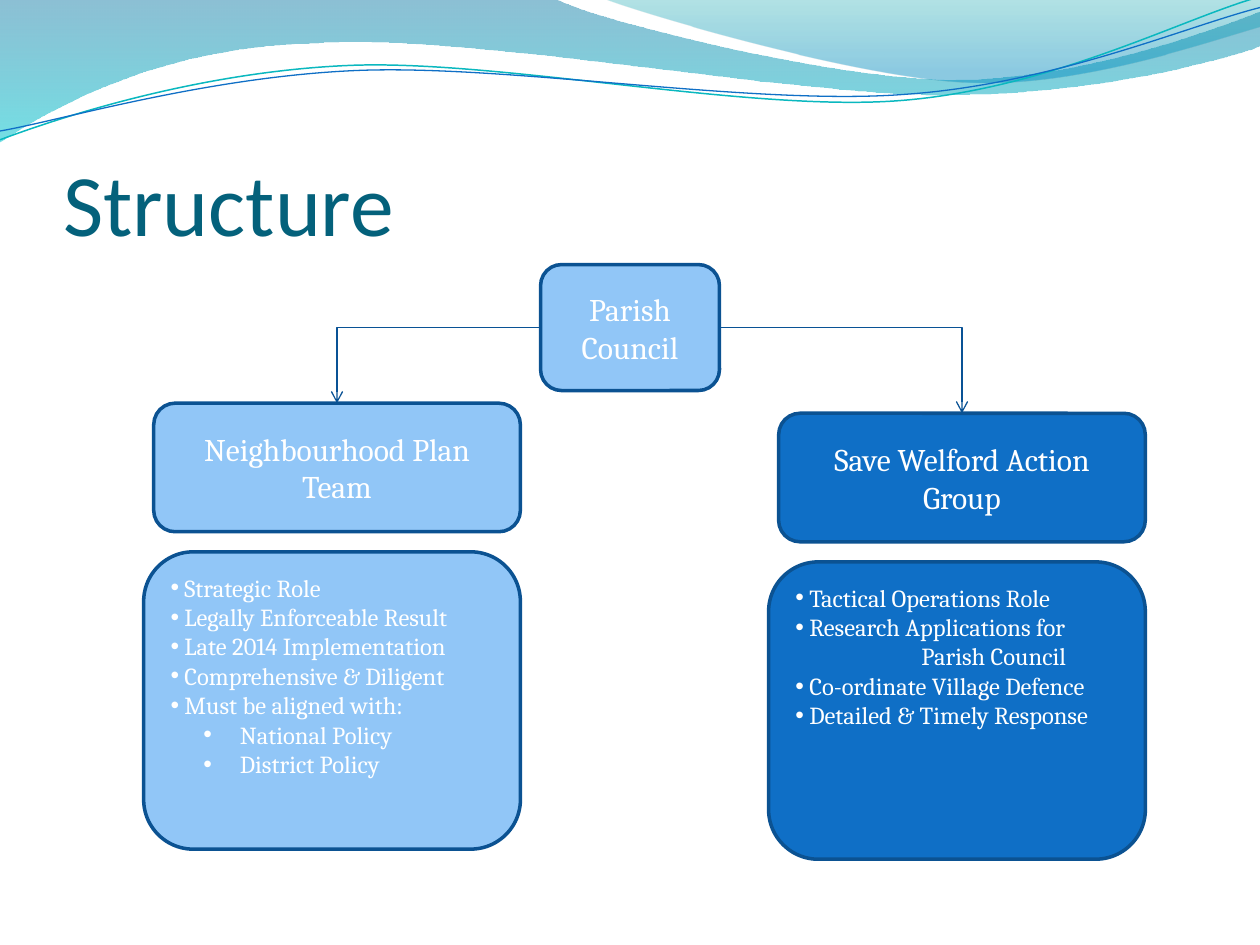
from dataclasses import dataclass

from lxml.etree import SubElement
from pptx import Presentation
from pptx.dml.color import RGBColor
from pptx.enum.shapes import MSO_CONNECTOR as Connector, MSO_SHAPE as Preset
from pptx.enum.text import MSO_ANCHOR as Anchor, PP_ALIGN as Align
from pptx.oxml.ns import qn
from pptx.util import Inches, Pt

WHITE = RGBColor(0xFF, 0xFF, 0xFF)
TITLE_TEAL = RGBColor(0x04, 0x61, 0x7B)
LIGHT_BLUE = RGBColor(0x91, 0xC6, 0xF7)
BLUE = RGBColor(0x0F, 0x6F, 0xC6)
BORDER_BLUE = RGBColor(0x0B, 0x52, 0x92)
ARROW_BLUE = RGBColor(0x09, 0x52, 0x95)
LINE_TEAL = RGBColor(0x0A, 0xB8, 0xBF)
WAVE_BLUE = RGBColor(0x00, 0x74, 0xA1)
WAVE_CYAN = RGBColor(0x00, 0xC6, 0xCF)
CREST_TEAL = RGBColor(0x00, 0xA1, 0xA9)
CREST_BLUE = RGBColor(0x00, 0x8B, 0xBF)

TOP, LEFT, RIGHT = 0, 1, 3  # connection sites of a rounded rectangle


@dataclass
class GradientStop:
    position: float
    color: RGBColor
    opacity: int


@dataclass
class Box:
    left: float
    top: float
    width: float
    height: float
    fill: RGBColor


@dataclass
class Item:
    text: str
    level: int = 0


# Each step is an end point (x, y) or a Bezier curve (x1, y1, x2, y2, x, y)
WAVE = [(0, 0), (4.4, -0.01), (4.76, 0.17, 6.64, 0.63, 7.58, 0.63),
        (8.53, 0.63, 9.58, 0.26, 10, 0.09), (10.01, 0.36),
        (9.83, 0.44, 8.7, 0.76, 7.46, 0.75), (6.22, 0.75, 3.82, 0.28, 2.57, 0.34),
        (1.29, 0.36, 0.46, 0.83, -0.01, 1.13)]
CREST = [(4.79, -0.01), (5.09, 0.11, 6.82, 0.62, 7.69, 0.65),
         (8.56, 0.69, 9.61, 0.32, 10, 0.21), (10, 0)]
TEAL_LINE = [(0, 1.11), (0.48, 0.93, 1.58, 0.57, 2.77, 0.52),
             (3.95, 0.47, 5.93, 0.89, 7.13, 0.8), (8.33, 0.71, 9.38, 0.15, 9.98, -0.02)]
BLUE_LINE = [(0, 1.04), (0.47, 0.96, 1.64, 0.61, 2.83, 0.56),
             (4.03, 0.51, 5.97, 0.84, 7.17, 0.75), (8.36, 0.67, 9.41, 0.21, 10, 0.06)]

PLAN_ITEMS = [Item("Strategic Role"), Item("Legally Enforceable Result"),
              Item("Late 2014 Implementation"), Item("Comprehensive & Diligent"),
              Item("Must be aligned with:"), Item("National Policy", 1),
              Item("District Policy", 1)]
ACTION_ITEMS = [Item("Tactical Operations Role"),
                Item("Research Applications for\v\tParish Council"),
                Item("Co-ordinate Village Defence"), Item("Detailed & Timely Response")]


def add_outline(slide, steps: list, close: bool):
    """Draw all points as segments, then merge each control triple into a curve."""
    points = [(Inches(step[i]), Inches(step[i + 1]))
              for step in steps for i in range(0, len(step), 2)]
    builder = slide.shapes.build_freeform(*points[0])
    builder.add_line_segments(points[1:], close=close)
    shape = builder.convert_to_shape()
    shape.shadow.inherit = False
    segments = iter(list(shape._element.iter(qn("a:lnTo"))))
    for step in steps[1:]:
        segment = next(segments)
        if len(step) == 6:
            curve = segment.makeelement(qn("a:cubicBezTo"))
            segment.addprevious(curve)
            for part in (segment, next(segments), next(segments)):
                curve.append(part[0])
                part.getparent().remove(part)
    return shape


def add_wave(slide, steps: list, stops: list[GradientStop]) -> None:
    shape = add_outline(slide, steps, True)
    shape.line.fill.background()
    shape.fill.gradient()
    shape.fill.gradient_angle = 270
    for gradient_stop, stop in zip(shape.fill.gradient_stops, stops):
        gradient_stop.position = stop.position
        gradient_stop.color.rgb = stop.color
    for color, stop in zip(shape._element.spPr.iter(qn("a:srgbClr")), stops):
        SubElement(color, qn("a:alpha"), val=str(stop.opacity * 1000))


def add_wave_line(slide, steps: list, color: RGBColor, width: float) -> None:
    shape = add_outline(slide, steps, False)
    shape.fill.background()
    shape.line.color.rgb = color
    shape.line.width = Pt(width)


def add_box(slide, box: Box):
    shape = slide.shapes.add_shape(
        Preset.ROUNDED_RECTANGLE, Inches(box.left), Inches(box.top),
        Inches(box.width), Inches(box.height))
    shape.shadow.inherit = False
    shape.fill.solid()
    shape.fill.fore_color.rgb = box.fill
    shape.line.color.rgb = BORDER_BLUE
    shape.line.width = Pt(2)
    shape.text_frame.word_wrap = True
    return shape


def style(paragraph, font_name: str, size: int, color: RGBColor, align) -> None:
    paragraph.alignment = align
    paragraph.font.name = font_name
    paragraph.font.size = Pt(size)
    paragraph.font.color.rgb = color


def add_heading_box(slide, box: Box, text: str):
    shape = add_box(slide, box)
    shape.text_frame.vertical_anchor = Anchor.MIDDLE
    paragraph = shape.text_frame.paragraphs[0]
    paragraph.text = text
    style(paragraph, "Cambria", 18, WHITE, Align.CENTER)
    return shape


def add_list_box(slide, box: Box, items: list[Item]) -> None:
    frame = add_box(slide, box).text_frame
    frame.vertical_anchor = Anchor.TOP
    for index, item in enumerate(items):
        paragraph = frame.add_paragraph() if index else frame.paragraphs[0]
        paragraph.text = item.text
        paragraph.level = item.level
        margin, hanging = ((0.11, 0.11), (0.55, 0.29))[item.level]
        properties = paragraph._p.get_or_add_pPr()
        properties.set("marL", str(Inches(margin)))
        properties.set("indent", str(-Inches(hanging)))
        SubElement(properties, qn("a:buFont"), typeface="Arial")
        SubElement(properties, qn("a:buChar"), char="•")
        if "\t" in item.text:
            tabs = SubElement(properties, qn("a:tabLst"))
            SubElement(tabs, qn("a:tab"), pos=str(Inches(1)), algn="l")
        style(paragraph, "Cambria", 14, WHITE, Align.LEFT)


def add_arrow(slide, source, site: int, target) -> None:
    arrow = slide.shapes.add_connector(Connector.ELBOW, 0, 0, 0, 0)
    arrow.begin_connect(source, site)
    arrow.end_connect(target, TOP)
    arrow.line.color.rgb = ARROW_BLUE
    arrow.line.width = Pt(0.75)
    properties = arrow._element.spPr
    properties.find(qn("a:prstGeom")).set("prst", "bentConnector2")
    SubElement(properties.find(qn("a:ln")), qn("a:tailEnd"), type="arrow")
    SubElement(properties, qn("a:effectLst"))


def main() -> None:
    presentation = Presentation()
    presentation.slide_width, presentation.slide_height = Inches(10), Inches(7.5)
    slide = presentation.slides.add_slide(presentation.slide_layouts[5])

    # Wave decoration
    add_wave(slide, WAVE, [GradientStop(0, WAVE_BLUE, 45), GradientStop(1, WAVE_CYAN, 55)])
    add_wave(slide, CREST, [GradientStop(0, CREST_TEAL, 30), GradientStop(0.8, CREST_BLUE, 45)])
    add_wave_line(slide, TEAL_LINE, LINE_TEAL, 0.85)
    add_wave_line(slide, BLUE_LINE, BLUE, 0.75)

    # Title
    title = slide.shapes.title
    title.left, title.top = Inches(0.5), Inches(0.77)
    title.width, title.height = Inches(9), Inches(1.25)
    frame = title.text_frame
    frame.text = "Structure"
    frame.vertical_anchor = Anchor.BOTTOM
    frame.margin_left = frame.margin_right = frame.margin_bottom = 0
    style(frame.paragraphs[0], "Calibri", 50, TITLE_TEAL, Align.LEFT)

    # Organisation boxes
    council = add_heading_box(slide, Box(4.29, 2.1, 1.42, 1, LIGHT_BLUE), "Parish Council")
    plan = add_heading_box(slide, Box(1.22, 3.2, 2.91, 1.02, LIGHT_BLUE),
                           "Neighbourhood Plan Team")
    action = add_heading_box(slide, Box(6.18, 3.28, 2.91, 1.02, BLUE),
                             "Save Welford Action Group")
    add_list_box(slide, Box(1.14, 4.38, 2.99, 2.36, LIGHT_BLUE), PLAN_ITEMS)
    add_list_box(slide, Box(6.1, 4.46, 2.99, 2.36, BLUE), ACTION_ITEMS)

    # Arrows from the council to both groups
    add_arrow(slide, council, LEFT, plan)
    add_arrow(slide, council, RIGHT, action)

    presentation.save("out.pptx")


if __name__ == "__main__":
    main()
